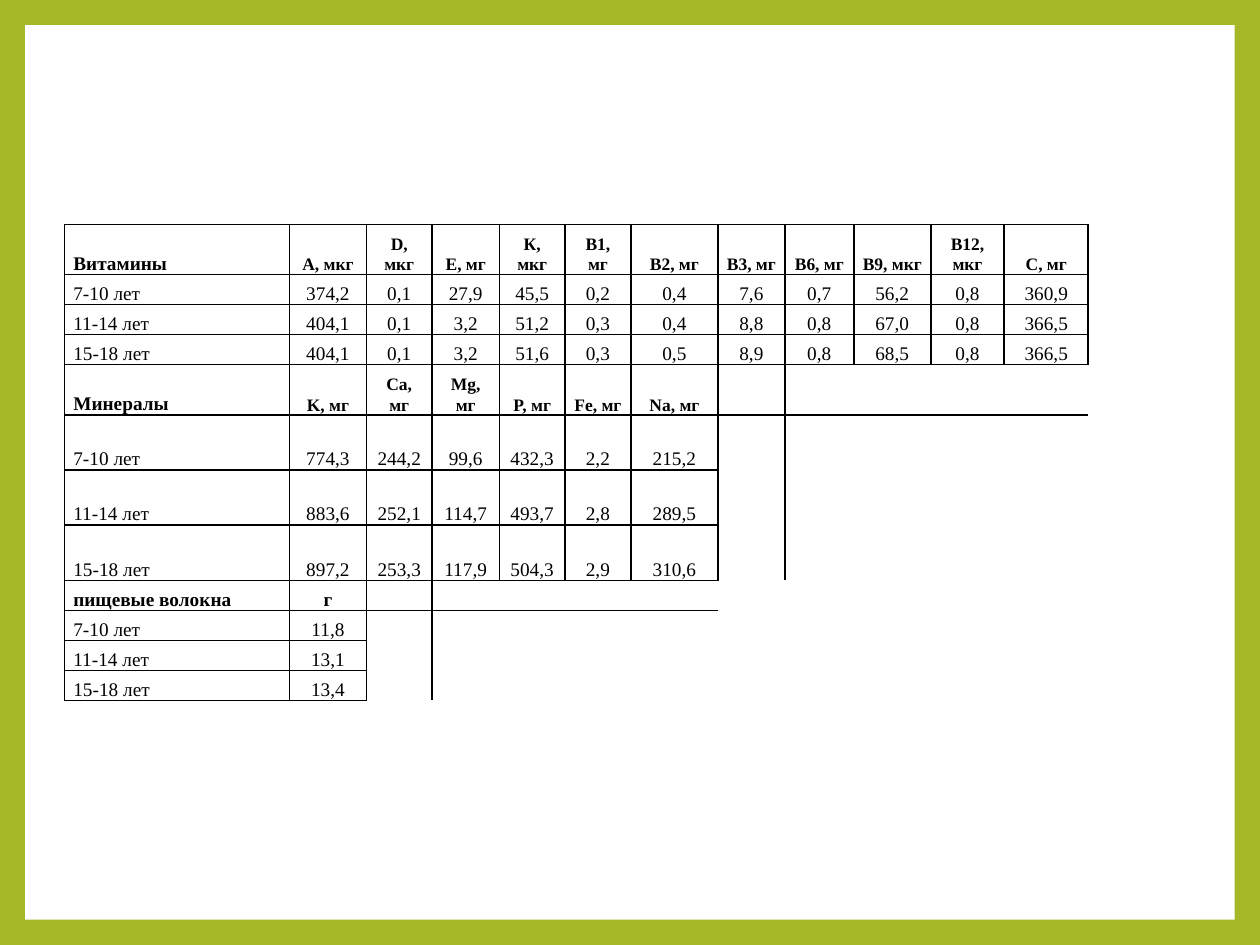
from dataclasses import dataclass
from lxml import etree
from pptx import Presentation
from pptx.dml.color import RGBColor
from pptx.enum.shapes import MSO_SHAPE
from pptx.enum.text import MSO_ANCHOR, PP_ALIGN
from pptx.oxml.ns import qn
from pptx.util import Pt

RECT = MSO_SHAPE.RECTANGLE
BOTTOM = MSO_ANCHOR.BOTTOM
LEFT, CENTER = PP_ALIGN.LEFT, PP_ALIGN.CENTER
PLAIN = "{2D5ABB26-0587-4C30-8999-92F81FD0307C}"


@dataclass(frozen=True)
class Theme:
    frame: str = "A6B727"
    paper: str = "FFFFFF"
    ink: str = "000000"
    font: str = "Times New Roman"
    body: int = 11
    unit: int = 10
    rule: int = 1


AGES = ["7-10 лет", "11-14 лет", "15-18 лет"]
GROUPS = [
    (28.7, 17.15, 10,
     "Витамины|А, мкг|D, мкг|Е, мг|К, мкг|B1, мг|В2, мг|В3, мг|В6, мг|В9, мкг|В12, мкг|C, мг",
     ["374,2 0,1 27,9 45,5 0,2 0,4 7,6 0,7 56,2 0,8 360,9",
      "404,1 0,1 3,2 51,2 0,3 0,4 8,8 0,8 67,0 0,8 366,5",
      "404,1 0,1 3,2 51,6 0,3 0,5 8,9 0,8 68,5 0,8 366,5"]),
    (28.7, 31.5, 10,
     "Минералы|K, мг|Ca, мг|Mg, мг|P, мг|Fe, мг|Na, мг",
     ["774,3 244,2 99,6 432,3 2,2 215,2",
      "883,6 252,1 114,7 493,7 2,8 289,5",
      "897,2 253,3 117,9 504,3 2,9 310,6"]),
    (17.15, 17.15, 11, "пищевые волокна|г", ["11,8", "13,1", "13,4"]),
]
WIDTHS = [128.5, 44, 37.5, 38.5, 37.5, 37.7, 49.7, 38.3, 39.4, 44, 42, 48, 38.2]
JOINED = range(4, 8)


class Deck:
    def __init__(self, theme):
        self.theme = theme
        self.file = Presentation()
        self.file.slide_width, self.file.slide_height = Pt(720), Pt(540)
        self.slide = self.file.slides.add_slide(self.file.slide_layouts[6])

    def back(self):
        fill = self.slide.background.fill
        fill.solid()
        fill.fore_color.rgb = RGBColor.from_string(self.theme.frame)

    def panel(self, x, y, w, h):
        shape = self.slide.shapes.add_shape(RECT, Pt(x), Pt(y), Pt(w), Pt(h))
        shape.shadow.inherit = False
        shape.fill.solid()
        shape.fill.fore_color.rgb = RGBColor.from_string(self.theme.paper)
        shape.line.fill.background()

    def grid(self, x, y, widths, heights):
        shape = self.slide.shapes.add_table(
            len(heights), len(widths), Pt(x), Pt(y), Pt(sum(widths)), Pt(sum(heights)))
        table = shape.table
        table.first_row = table.horz_banding = False
        table._tbl.tblPr.find(qn("a:tableStyleId")).text = PLAIN
        for column, width in zip(table.columns, widths):
            column.width = Pt(width)
        for row, height in zip(table.rows, heights):
            row.height = Pt(height)
        return table

    def label(self, cell, text, size, bold, align):
        cell.text_frame.text = text
        line = cell.text_frame.paragraphs[0]
        line.alignment, line.line_spacing, line.space_after = align, 1.07, Pt(8)
        for run in line.runs:
            font = run.font
            font.name, font.size, font.bold = self.theme.font, Pt(size), bold
            font.color.rgb = RGBColor.from_string(self.theme.ink)

    def clear(self, cell):
        line = cell.text_frame.paragraphs[0]._p
        etree.SubElement(line, qn("a:endParaRPr"), sz=str(self.theme.unit * 100))

    def trim(self, cell, sides):
        cell.vertical_anchor = BOTTOM
        cell.margin_left = cell.margin_right = Pt(5)
        cell.margin_top = cell.margin_bottom = 0
        cell.fill.background()
        props = cell._tc.get_or_add_tcPr()
        for spot, side in enumerate(sides):
            edge = etree.Element(qn("a:ln" + side), w=str(Pt(self.theme.rule)))
            fill = etree.SubElement(edge, qn("a:solidFill"))
            etree.SubElement(fill, qn("a:srgbClr"), val=self.theme.ink)
            props.insert(spot, edge)


def main():
    theme = Theme()
    deck = Deck(theme)
    deck.back()
    deck.panel(14.4, 14.4, 691.2, 511.2)

    rows, heights = [], []
    for tall, low, unit, head, data in GROUPS:
        rows.append((head.split("|"), unit, True))
        rows += [([age] + line.split(), theme.body, False)
                 for age, line in zip(AGES, data)]
        heights += [tall] + [low] * len(data)

    table = deck.grid(36.9, 128.3, WIDTHS, heights)
    above = 0
    for r, (texts, size, bold) in enumerate(rows):
        count = len(texts)
        for c in range(len(WIDTHS)):
            cell = table.cell(r, c)
            if c < count:
                deck.label(cell, texts[c], size if c else theme.body, bold,
                           CENTER if c else LEFT)
                sides = "LRTB"
            else:
                deck.clear(cell)
                sides = ("L" if c == count else "") + ("T" if c < above else "")
            deck.trim(cell, sides)
        above = count
    for r in JOINED:
        table.cell(r, 8).merge(table.cell(r, 9))

    deck.file.save("out.pptx")


if __name__ == "__main__":
    main()
